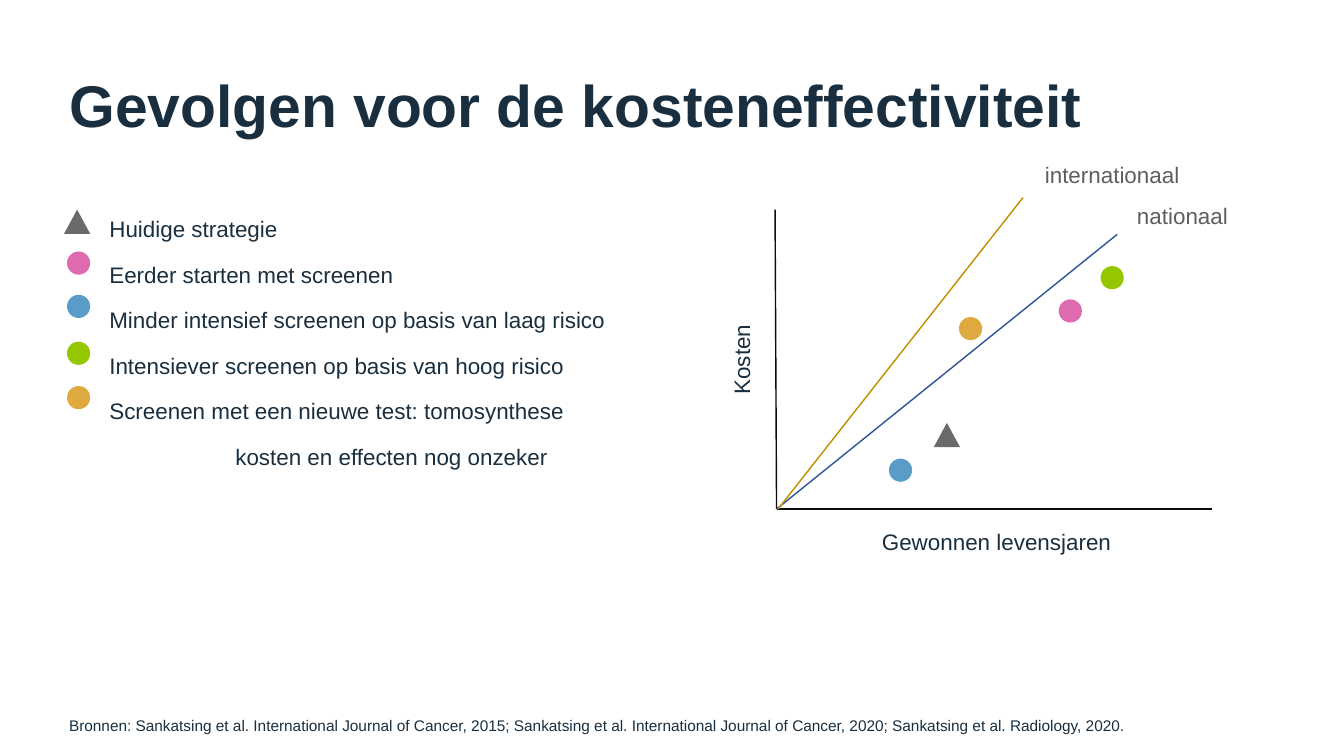
from pptx import Presentation
from pptx.dml.color import RGBColor
from pptx.enum.shapes import MSO_CONNECTOR as CONNECTOR, MSO_SHAPE as SHAPE
from pptx.enum.text import MSO_ANCHOR as ANCHOR, MSO_AUTO_SIZE as AUTO_SIZE, PP_ALIGN as ALIGN
from pptx.oxml.ns import qn
from pptx.util import Inches, Pt
from lxml.etree import SubElement

FONT = "Arial"
COLORS = {
    "navy": "192F3F", "label": "5E5E5E", "axis": "0D0D0D",
    "national": "2F5597", "international": "BF9000",
    "grey": "6A6A6A", "pink": "DE6BAF", "blue": "599CC7",
    "green": "94C700", "amber": "DEA93E",
}

# Strategy: text, marker shape, colour, legend position, position in the graph
STRATEGIES = [
    ("Huidige strategie", SHAPE.ISOSCELES_TRIANGLE, "grey", (1.27, 4.16), (18.53, 8.39)),
    ("Eerder starten met screenen", SHAPE.OVAL, "pink", (1.33, 4.99), (21.01, 5.94)),
    ("Minder intensief screenen op basis van laag risico", SHAPE.OVAL, "blue",
     (1.33, 5.85), (17.64, 9.1)),
    ("Intensiever screenen op basis van hoog risico", SHAPE.OVAL, "green",
     (1.33, 6.78), (21.84, 5.28)),
    ("Screenen met een nieuwe test: tomosynthese", SHAPE.OVAL, "amber",
     (1.33, 7.66), (19.03, 6.29)),
]
REMARK = "kosten en effecten nog onzeker"
MARKER_SIZES = {SHAPE.OVAL: (0.46, 0.46), SHAPE.ISOSCELES_TRIANGLE: (0.52, 0.48)}
SOURCES = ("Bronnen: Sankatsing et al. International Journal of Cancer, 2015; "
           "Sankatsing et al. International Journal of Cancer, 2020; "
           "Sankatsing et al. Radiology, 2020.")


def rgb(name):
    return RGBColor.from_string(COLORS[name])


def place(box, at, inset, anchor=ANCHOR.TOP, wrap=True):
    box.left, box.top, box.width, box.height = map(Inches, at)
    frame = box.text_frame
    frame.auto_size = AUTO_SIZE.NONE
    frame.word_wrap = wrap
    frame.vertical_anchor = anchor
    frame.margin_left = frame.margin_right = Inches(inset)
    frame.margin_top = frame.margin_bottom = Inches(inset)
    return frame


def style(paragraph, size, color="navy", bold=False, align=ALIGN.LEFT):
    paragraph.alignment = align
    for run in paragraph.runs:
        run.font.name = FONT
        run.font.size = Pt(size)
        run.font.bold = bold
        run.font.color.rgb = rgb(color)


def add_title(slide, text):
    frame = place(slide.shapes.title, (1.32, 1.3, 20.22, 1.42), 0.06, wrap=False)
    frame.text = text
    style(frame.paragraphs[0], 84, bold=True)


def add_strategy_list(slide):
    frame = place(slide.placeholders[1], (1.61, 3.95, 12.61, 6.09), 0.06)
    lines = [(strategy[0], 0.5) for strategy in STRATEGIES] + [(REMARK, 3)]
    frame.text = "\n".join(text for text, _ in lines)
    for index, (paragraph, (_, indent)) in enumerate(zip(frame.paragraphs, lines)):
        paragraph.line_spacing = 1.5
        paragraph.space_before = Pt(5 if index else 0)
        paragraph.space_after = Pt(2.4)
        properties = paragraph._p.get_or_add_pPr()
        properties.set("marL", str(Inches(indent)))
        properties.set("indent", "0")
        SubElement(properties, qn("a:buNone"))
        style(paragraph, 32)


def add_label(slide, text, at, size=32, color="navy", align=ALIGN.CENTER,
              inset=0.05, anchor=ANCHOR.TOP, rotation=0):
    box = slide.shapes.add_textbox(*map(Inches, at))
    box.rotation = rotation
    frame = place(box, at, inset, anchor)
    frame.text = text
    style(frame.paragraphs[0], size, color, align=align)


def add_line(slide, start, end, color):
    line = slide.shapes.add_connector(CONNECTOR.STRAIGHT, *map(Inches, start + end))
    line.line.color.rgb = rgb(color)
    line.line.width = Pt(2)
    SubElement(line._element.spPr, qn("a:effectLst"))


def add_marker(slide, kind, position, color):
    marker = slide.shapes.add_shape(kind, *map(Inches, position + MARKER_SIZES[kind]))
    marker.shadow.inherit = False
    marker.fill.solid()
    marker.fill.fore_color.rgb = rgb(color)
    marker.line.fill.background()


def add_graph(slide):
    # Axes and threshold lines
    origin = (15.41, 10.1)
    add_line(slide, (15.38, 4.16), origin, "axis")
    add_line(slide, origin, (24.06, 10.1), "axis")
    add_line(slide, origin, (22.17, 4.65), "national")
    add_line(slide, (15.44, 10.1), (20.3, 3.92), "international")

    # Axis titles and threshold names
    add_label(slide, "Gewonnen levensjaren", (15.45, 10.43, 8.65, 0.61))
    add_label(slide, "Kosten", (11.76, 6.8, 5.93, 0.67), rotation=270)
    for name, at in (("internationaal", (20.19, 3.14, 3.76, 0.65)),
                     ("nationaal", (22.17, 3.96, 2.59, 0.65))):
        add_label(slide, name, at, color="label", inset=0.06, anchor=ANCHOR.MIDDLE)


def main():
    deck = Presentation()
    deck.slide_width, deck.slide_height = Inches(26.67), Inches(15)
    slide = deck.slides.add_slide(deck.slide_layouts[1])

    add_title(slide, "Gevolgen voor de kosteneffectiviteit")
    add_strategy_list(slide)
    add_graph(slide)

    # Each strategy is marked in the list and in the graph
    for _, kind, color, in_list, in_graph in STRATEGIES:
        for position in (in_list, in_graph):
            add_marker(slide, kind, position, color)

    add_label(slide, SOURCES, (1.32, 14.16, 21.53, 0.84), size=22, align=ALIGN.LEFT)
    deck.save("out.pptx")


if __name__ == "__main__":
    main()
